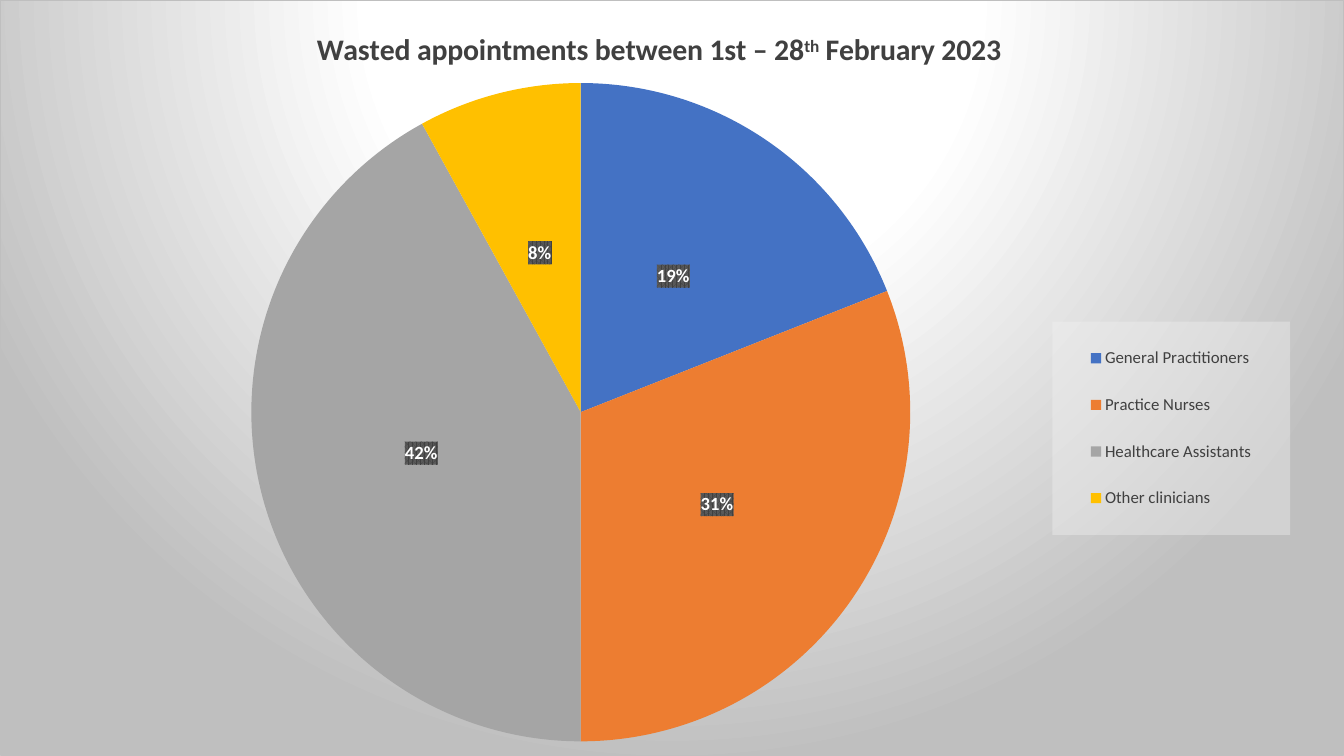
from pptx import Presentation
from pptx.chart.data import CategoryChartData
from pptx.dml.color import RGBColor
from pptx.enum.chart import XL_CHART_TYPE, XL_LABEL_POSITION, XL_LEGEND_POSITION
from pptx.oxml import parse_xml
from pptx.oxml.ns import nsdecls, qn
from pptx.util import Inches, Pt

BLACK = RGBColor(0x00, 0x00, 0x00)
WHITE = RGBColor(0xFF, 0xFF, 0xFF)
PALE = RGBColor(0xF2, 0xF2, 0xF2)
SILVER = RGBColor(0xBF, 0xBF, 0xBF)
DARK = RGBColor(0x40, 0x40, 0x40)
SLATE = RGBColor(0x59, 0x59, 0x59)
BLUE = RGBColor(0x44, 0x72, 0xC4)
ORANGE = RGBColor(0xED, 0x7D, 0x31)
GRAY = RGBColor(0xA5, 0xA5, 0xA5)
GOLD = RGBColor(0xFF, 0xC0, 0x00)
FACE = "Calibri"
WIDTH, HEIGHT = Inches(13.33), Inches(7.5)

SLICES = [
    ("General Practitioners", 19, BLUE),
    ("Practice Nurses", 31, ORANGE),
    ("Healthcare Assistants", 42, GRAY),
    ("Other clinicians", 8, GOLD),
]
TITLE = [
    ("Wasted appointments between 1st – 28", False),
    ("th", True),
    (" February 2023 ", False),
]


def set_font(font, size, color, bold=False):
    font.name = FACE
    font.size = Pt(size)
    font.bold = bold
    font.color.rgb = color


def tint(color, extra=""):
    return f'<a:srgbClr val="{color}">{extra}</a:srgbClr>'


def set_look(parent, body):
    text = parent.find(qn("c:txPr"))
    text.addprevious(parse_xml(f'<c:spPr {nsdecls("c", "a")}>{body}</c:spPr>'))


def set_place(parent, index, left, top, size=None, inner=False):
    for old in parent.findall(qn("c:layout")):
        parent.remove(old)
    parts = [("xMode", "edge"), ("yMode", "edge"),
             ("x", left / WIDTH), ("y", top / HEIGHT)]
    if inner:
        parts.insert(0, ("layoutTarget", "inner"))
    if size:
        parts += [("w", size[0] / WIDTH), ("h", size[1] / HEIGHT)]
    body = "".join(f'<c:{name} val="{value}"/>' for name, value in parts)
    parent.insert(index, parse_xml(
        f'<c:layout {nsdecls("c")}><c:manualLayout>{body}</c:manualLayout></c:layout>'))


def add_pie(slide):
    data = CategoryChartData()
    data.categories = [name for name, _, _ in SLICES]
    data.add_series("Series 1", [value for _, value, _ in SLICES])
    frame = slide.shapes.add_chart(XL_CHART_TYPE.PIE, 0, 0, WIDTH, HEIGHT, data)
    chart = frame.chart
    set_font(chart.font, 10, BLACK)
    plot = chart.plots[0]
    plot.vary_by_categories = True
    for index, (_, _, color) in enumerate(SLICES):
        look = plot.series[0].points[index].format
        look.fill.solid()
        look.fill.fore_color.rgb = color
        look.line.fill.background()
    area = chart._chartSpace.chart.plotArea
    side = Inches(6.54)
    set_place(area, 0, Inches(2.49), Inches(0.82), (side, side), True)
    return chart


def set_back(chart):
    space = chart._chartSpace
    space.chart.addprevious(parse_xml(f'<c:roundedCorners {nsdecls("c")} val="0"/>'))
    stops = "".join(f'<a:gs pos="{pos}">{tint(color)}</a:gs>'
                    for pos, color in [(0, WHITE), (39000, WHITE), (100000, SILVER)])
    set_look(space, f'<a:gradFill><a:gsLst>{stops}</a:gsLst><a:path path="circle">'
             '<a:fillToRect l="50000" t="-80000" r="50000" b="180000"/></a:path></a:gradFill>'
             f'<a:ln w="{Pt(0.75)}"><a:solidFill>{tint(SILVER)}</a:solidFill></a:ln>')


def add_title(chart):
    chart.has_title = True
    title = chart.chart_title
    para = title.text_frame.paragraphs[0]
    for text, raised in TITLE:
        run = para.add_run()
        run.text = text
        set_font(run.font, 21.3, DARK, True)
        if raised:
            run.font._element.set("baseline", "30000")
    set_place(title._element, 1, Inches(3.11), Inches(0.27))


def add_labels(chart):
    labels = chart.plots[0].series[0].data_labels
    labels.show_percentage = True
    labels.show_value = False
    labels.number_format = "0%"
    labels.number_format_is_linked = False
    labels.position = XL_LABEL_POSITION.CENTER
    set_font(labels.font, 13.3, WHITE, True)
    set_look(labels._element, f'<a:pattFill prst="pct75"><a:fgClr>{tint(DARK)}</a:fgClr>'
             f'<a:bgClr>{tint(SLATE)}</a:bgClr></a:pattFill>')


def add_legend(chart):
    chart.has_legend = True
    legend = chart.legend
    legend.position = XL_LEGEND_POSITION.RIGHT
    legend.include_in_layout = False
    set_font(legend.font, 12, DARK)
    clear = '<a:alpha val="39000"/>'
    set_look(legend._element, f'<a:solidFill>{tint(PALE, clear)}</a:solidFill>')
    set_place(legend._element, 1, Inches(10.44), Inches(3.19),
              (Inches(2.36), Inches(2.12)))


def main():
    deck = Presentation()
    deck.slide_width, deck.slide_height = WIDTH, HEIGHT
    slide = deck.slides.add_slide(deck.slide_layouts[6])
    chart = add_pie(slide)
    set_back(chart)
    add_title(chart)
    add_labels(chart)
    add_legend(chart)
    deck.save("out.pptx")


if __name__ == "__main__":
    main()
